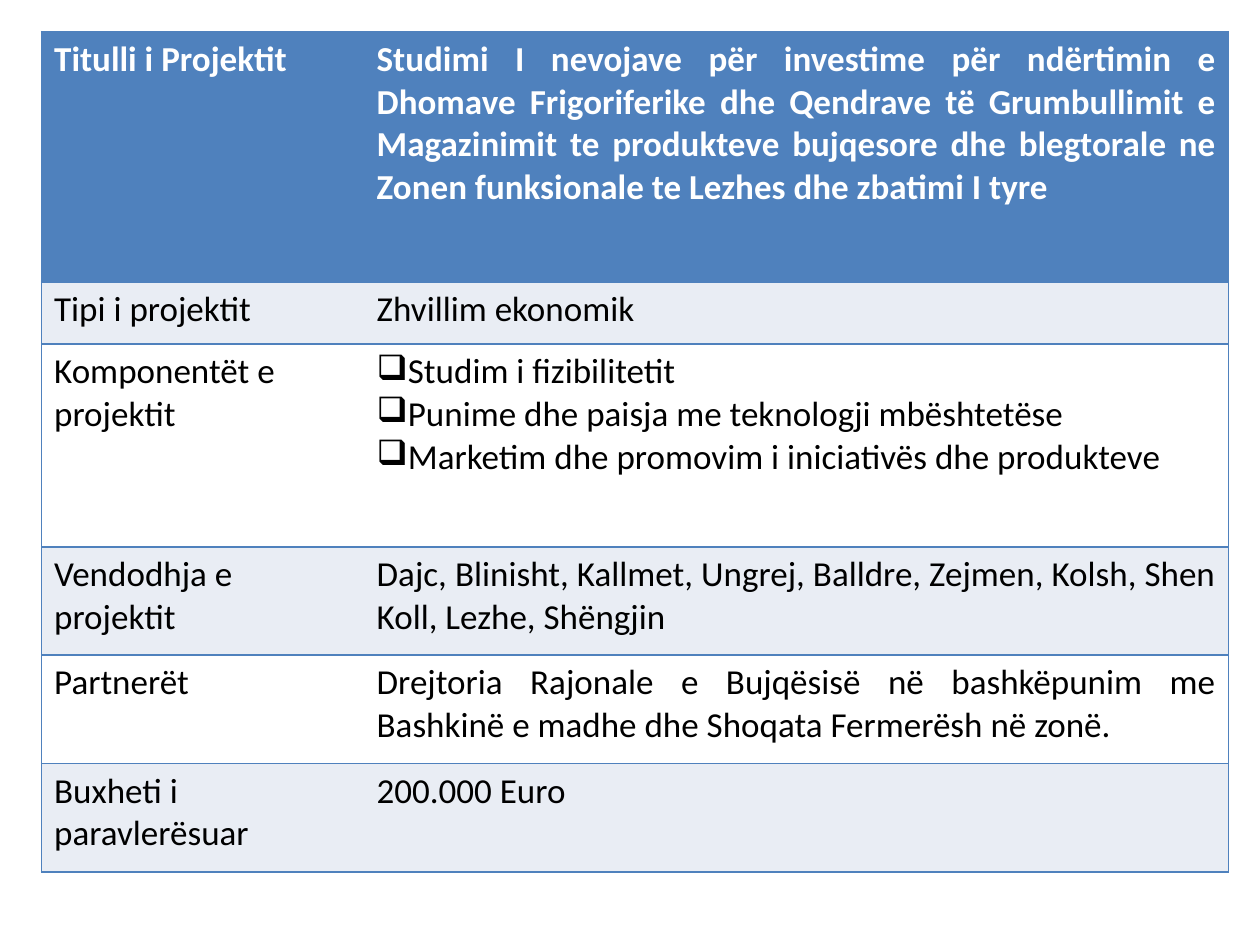
from lxml import etree
from pptx import Presentation, util as u
from pptx.dml.color import RGBColor
from pptx.enum import text
from pptx.oxml import ns

BLUE, PALE, WHITE, BLACK = "4F81BD", "E9EDF4", "FFFFFF", "000000"


def paint(color_format, hex_color):
    color_format.rgb = RGBColor.from_string(hex_color)


def add_border(cell, side, hex_color):
    """Draw one cell side; no colour means no line."""
    line = etree.SubElement(cell._tc.get_or_add_tcPr(), ns.qn("a:ln" + side), w="12700")
    if hex_color:
        fill = etree.SubElement(line, ns.qn("a:solidFill"))
        etree.SubElement(fill, ns.qn("a:srgbClr"), val=hex_color)
    else:
        etree.SubElement(line, ns.qn("a:noFill"))


# Project facts: label, row height in inches, paragraphs
facts = [
    ("Titulli i Projektit", 1.99, [
        "Studimi I nevojave për investime për ndërtimin e Dhomave Frigoriferike "
        "dhe Qendrave të Grumbullimit e Magazinimit te produkteve bujqesore dhe "
        "blegtorale ne Zonen funksionale te Lezhes dhe zbatimi I tyre"]),
    ("Tipi i projektit", 0.49, ["Zhvillim ekonomik"]),
    ("Komponentët e projektit", 1.61, [
        "Studim i fizibilitetit",
        "Punime dhe paisja me teknologji mbështetëse",
        "Marketim dhe promovim i iniciativës dhe produkteve"]),
    ("Vendodhja e projektit", 0.86, [
        "Dajc, Blinisht, Kallmet, Ungrej, Balldre, Zejmen, Kolsh, Shen Koll, "
        "Lezhe, Shëngjin"]),
    ("Partnerët", 0.86, [
        "Drejtoria Rajonale e Bujqësisë në bashkëpunim me Bashkinë e madhe dhe "
        "Shoqata Fermerësh në zonë."]),
    ("Buxheti i paravlerësuar", 0.86, ["200.000 Euro"]),
]
column_widths = [2.56, 6.86]

# Slide
deck = Presentation()
deck.slide_width, deck.slide_height = u.Inches(10), u.Inches(7.5)
page = deck.slides.add_slide(deck.slide_layouts[6])

# Table grid
table = page.shapes.add_table(
    len(facts), len(column_widths), u.Inches(0.33), u.Inches(0.25),
    u.Inches(sum(column_widths)), u.Inches(sum(fact[1] for fact in facts))).table
table.horz_banding = False
for column, width in zip(table.columns, column_widths):
    column.width = u.Inches(width)

# Rows: blue header, then alternating bands
for row_index, (label, height, details) in enumerate(facts):
    table.rows[row_index].height = u.Inches(height)
    is_header = row_index == 0
    band = BLUE if is_header else PALE if row_index % 2 else WHITE

    for column_index, lines in enumerate([[label], details]):
        cell = table.cell(row_index, column_index)
        is_detail = column_index == 1
        for side in "LRTB":
            inner = side == ("L" if is_detail else "R")
            add_border(cell, side, None if inner else BLUE)
        cell.fill.solid()
        paint(cell.fill.fore_color, band)

        cell.text_frame.text = "\n".join(lines)
        for para in cell.text_frame.paragraphs:
            para.font.name, para.font.size = "Calibri", u.Pt(20)
            para.font.bold = is_header
            paint(para.font.color, WHITE if is_header else BLACK)
            if is_detail:
                para.alignment = text.PP_ALIGN.JUSTIFY
            if len(lines) > 1:
                etree.SubElement(para._p.get_or_add_pPr(), ns.qn("a:buChar"), char="❑")
                # The bullet precedes the default run properties in the schema
                properties = para._p.pPr
                properties.append(properties.find(ns.qn("a:defRPr")))

deck.save("out.pptx")
